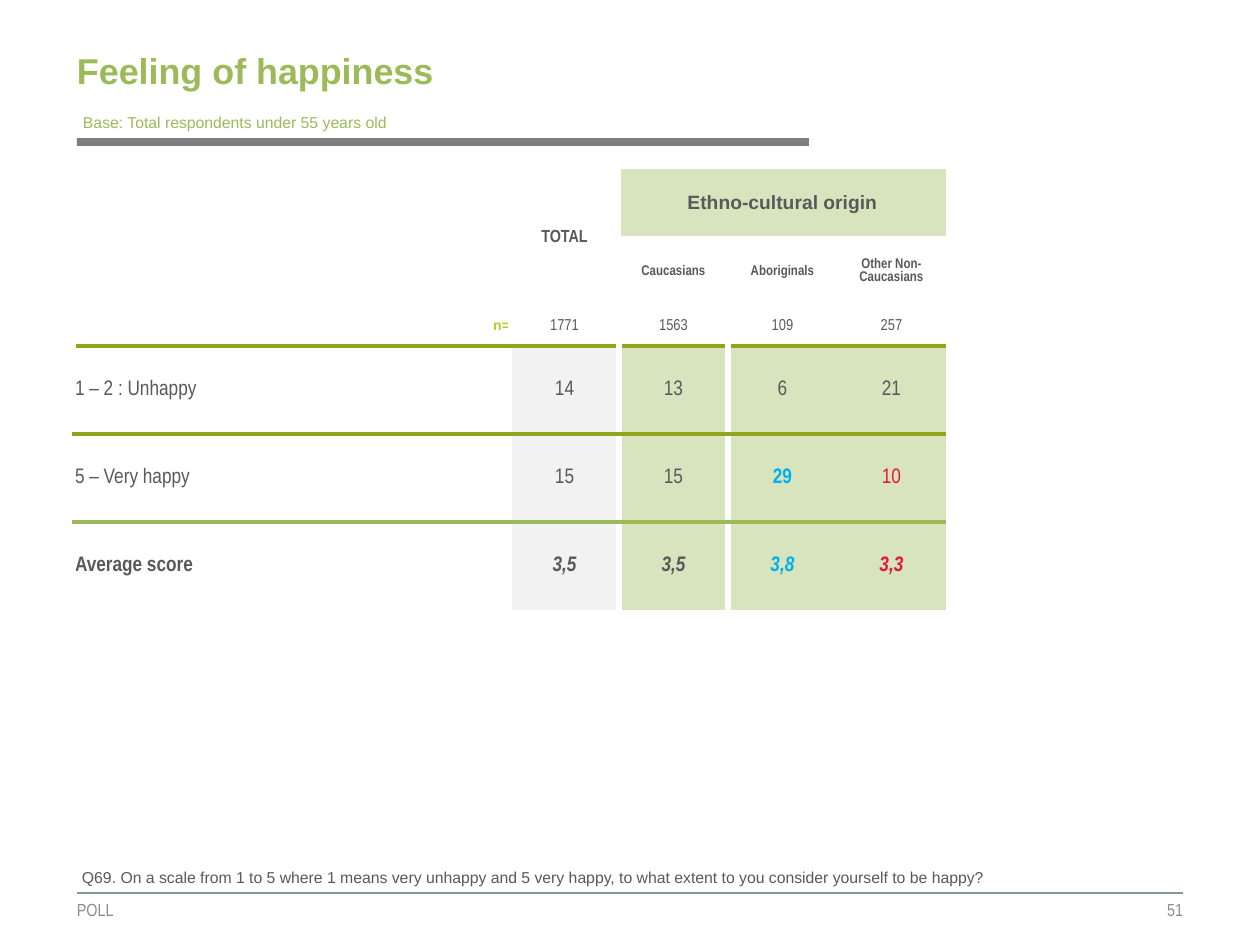
from dataclasses import dataclass
from typing import Optional

from lxml.etree import SubElement
from pptx import Presentation
from pptx.dml.color import RGBColor
from pptx.enum.shapes import MSO_CONNECTOR as Connector, MSO_SHAPE as Shape
from pptx.enum.text import MSO_ANCHOR as Anchor, MSO_AUTO_SIZE as AutoSize, PP_ALIGN as Align
from pptx.oxml.ns import qn
from pptx.util import Emu, Pt

EMU_PER_PX = 914400 / 126
GREEN, OLIVE, LIME, PALE = "9BBB59", "91A51B", "B5CC22", "D7E4BD"
DARK, GRAY, WHITE, BLUE, RED = "595959", "8C8C8C", "FFFFFF", "00B0F0", "E31836"
NO_STYLE = "{2D5ABB26-0587-4C30-8999-92F81FD0307C}"


@dataclass(frozen=True)
class Style:
    size: float
    color: str = DARK
    font: str = "Arial"
    bold: bool = False
    italic: bool = False
    align: Align = Align.LEFT


@dataclass(frozen=True)
class Label:
    text: str
    box: tuple[int, int, int, int]
    style: Style
    anchor: Anchor = Anchor.TOP
    margins: tuple[int, int, int, int] = (0, 0, 0, 0)
    wrap: bool = True


NARROW = "Arial Narrow"
INSET = (13, 6, 13, 6)
FOOTER = Style(10, GRAY, NARROW)
TITLE = Label("Feeling of happiness", (77, 45, 732, 87), Style(20.5, GREEN, bold=True),
              margins=(0, 4, 0, 0))
LABELS = [
    Label("POLL", (77, 893, 353, 33), FOOTER, Anchor.MIDDLE),
    Label("51", (825, 893, 358, 33), Style(10, GRAY, NARROW, align=Align.RIGHT), Anchor.MIDDLE),
    Label("Base: Total respondents under 55 years old", (70, 107, 334, 50),
          Style(9, GREEN), margins=INSET, wrap=False),
    Label("Q69. On a scale from 1 to 5 where 1 means very unhappy and 5 very happy, "
          "to what extent to you consider yourself to be happy?",
          (69, 862, 1077, 31), Style(9), margins=INSET),
]

COLUMNS = [436, 109, 109, 109, 109]
ROWS = [67, 70, 40, 88, 88, 88]
TEXTS = [
    ["", "TOTAL", "Ethno-cultural origin", "", ""],
    ["", "", "Caucasians", "Aboriginals", "Other Non-Caucasians"],
    ["n=", "1771", "1563", "109", "257"],
    ["1 – 2 : Unhappy", "14", "13", "6", "21"],
    ["5 – Very happy", "15", "15", "29", "10"],
    ["Average score", "3,5", "3,5", "3,8", "3,3"],
]
BASE_ROW, FIRST_BODY, LAST_ROW = 2, 3, 5
HIGHLIGHTS = {(4, 3): BLUE, (4, 4): RED, (5, 3): BLUE, (5, 4): RED}
RULES = {BASE_ROW: (OLIVE, 3), 4: (GREEN, 2.25)}


def px(length: float) -> Emu:
    return Emu(round(length * EMU_PER_PX))


def rgb(color: str) -> RGBColor:
    return RGBColor.from_string(color)


def style_paragraph(para, style: Style) -> None:
    para.alignment = style.align
    para.font.size = Pt(style.size)
    para.font.name = style.font
    para.font.bold = style.bold
    para.font.italic = style.italic
    para.font.color.rgb = rgb(style.color)


def set_margins(target, margins: tuple[int, int, int, int]) -> None:
    (target.margin_left, target.margin_top,
     target.margin_right, target.margin_bottom) = map(px, margins)


def fill_label(box, label: Label) -> None:
    frame = box.text_frame
    frame.auto_size = AutoSize.NONE
    frame.word_wrap = label.wrap
    frame.vertical_anchor = label.anchor
    set_margins(frame, label.margins)
    frame.text = label.text
    style_paragraph(frame.paragraphs[0], label.style)


def add_title(page, label: Label) -> None:
    box = page.shapes.title
    box.left, box.top, box.width, box.height = map(px, label.box)
    fill_label(box, label)


def add_label(page, label: Label) -> None:
    fill_label(page.shapes.add_textbox(*map(px, label.box)), label)


def add_title_bar(page) -> None:
    bar = page.shapes.add_shape(Shape.RECTANGLE, *map(px, (77, 138, 732, 8)))
    bar.shadow.inherit = False
    bar.fill.solid()
    bar.fill.fore_color.rgb = rgb("7F7F7F")
    bar.line.fill.background()


def add_footer_line(page) -> None:
    line = page.shapes.add_connector(Connector.STRAIGHT, *map(px, (77, 893, 1183, 893)))
    line.line.color.rgb = rgb("88959E")
    line.line.width = Pt(1.5)
    SubElement(line._element.spPr, qn("a:effectLst"))


def cell_style(row: int, column: int) -> Style:
    align = Align.LEFT if column == 0 else Align.CENTER
    if row == 0:
        return Style(11, bold=True, align=align) if column == 2 else Style(
            10, font=NARROW, bold=True, align=align)
    if row == 1:
        return Style(8, font=NARROW, bold=True, align=align)
    if row == BASE_ROW:
        return Style(8, LIME, bold=True, align=Align.RIGHT) if column == 0 else Style(
            9, font=NARROW, align=align)
    average = row == LAST_ROW
    return Style(12, HIGHLIGHTS.get((row, column), DARK), NARROW,
                 bold=average or (row, column) == (4, 3),
                 italic=average and column > 0, align=align)


def cell_fill(row: int, column: int) -> Optional[str]:
    if row >= FIRST_BODY and column == 1:
        return "F2F2F2"
    if column >= 2 and (row == 0 or row >= FIRST_BODY):
        return PALE
    return None


def vertical_border(row: int, edge: int) -> Optional[tuple[str, float]]:
    if row >= FIRST_BODY and edge == 2:
        return WHITE, 4.5
    if edge == 1 or (row < BASE_ROW and edge != 3) or (row >= FIRST_BODY and edge == 0):
        return WHITE, 3
    return None


def set_borders(cell, row: int, column: int) -> None:
    borders = {"L": vertical_border(row, column), "R": vertical_border(row, column + 1),
               "T": RULES.get(row - 1), "B": RULES.get(row)}
    properties = cell._tc.get_or_add_tcPr()
    for side, border in borders.items():
        if border:
            color, width = border
            line = SubElement(properties, qn(f"a:ln{side}"), w=str(Pt(width)))
            SubElement(SubElement(line, qn("a:solidFill")), qn("a:srgbClr"), val=color)


def format_cell(cell, row: int, column: int) -> None:
    set_borders(cell, row, column)
    fill = cell_fill(row, column)
    if fill:
        cell.fill.solid()
        cell.fill.fore_color.rgb = rgb(fill)
    else:
        cell.fill.background()
    is_base_label = (row, column) == (BASE_ROW, 0)
    set_margins(cell, (0, 6, 0, 6) if is_base_label else (1, 1, 1, 0))
    cell.vertical_anchor = Anchor.MIDDLE
    if TEXTS[row][column]:
        cell.text = TEXTS[row][column]
        para = cell.text_frame.paragraphs[0]
        style_paragraph(para, cell_style(row, column))
        if is_base_label:
            para.line_spacing = 0.95


def add_results_table(page) -> None:
    frame = page.shapes.add_table(len(ROWS), len(COLUMNS),
                                  *map(px, (74, 169, sum(COLUMNS), sum(ROWS))))
    table = frame.table
    table.first_row = table.horz_banding = False
    table._tbl.tblPr.find(qn("a:tableStyleId")).text = NO_STYLE
    for column, width in zip(table.columns, COLUMNS):
        column.width = px(width)
    for row, height in zip(table.rows, ROWS):
        row.height = px(height)
    for row in range(len(ROWS)):
        for column in range(len(COLUMNS)):
            format_cell(table.cell(row, column), row, column)
    table.cell(0, 1).merge(table.cell(1, 1))
    table.cell(0, 2).merge(table.cell(0, 4))


def main() -> None:
    deck = Presentation()
    deck.slide_width, deck.slide_height = px(1260), px(945)
    page = deck.slides.add_slide(deck.slide_layouts[5])
    add_footer_line(page)
    add_title_bar(page)
    add_title(page, TITLE)
    add_results_table(page)
    for label in LABELS:
        add_label(page, label)
    deck.save("out.pptx")


if __name__ == "__main__":
    main()
